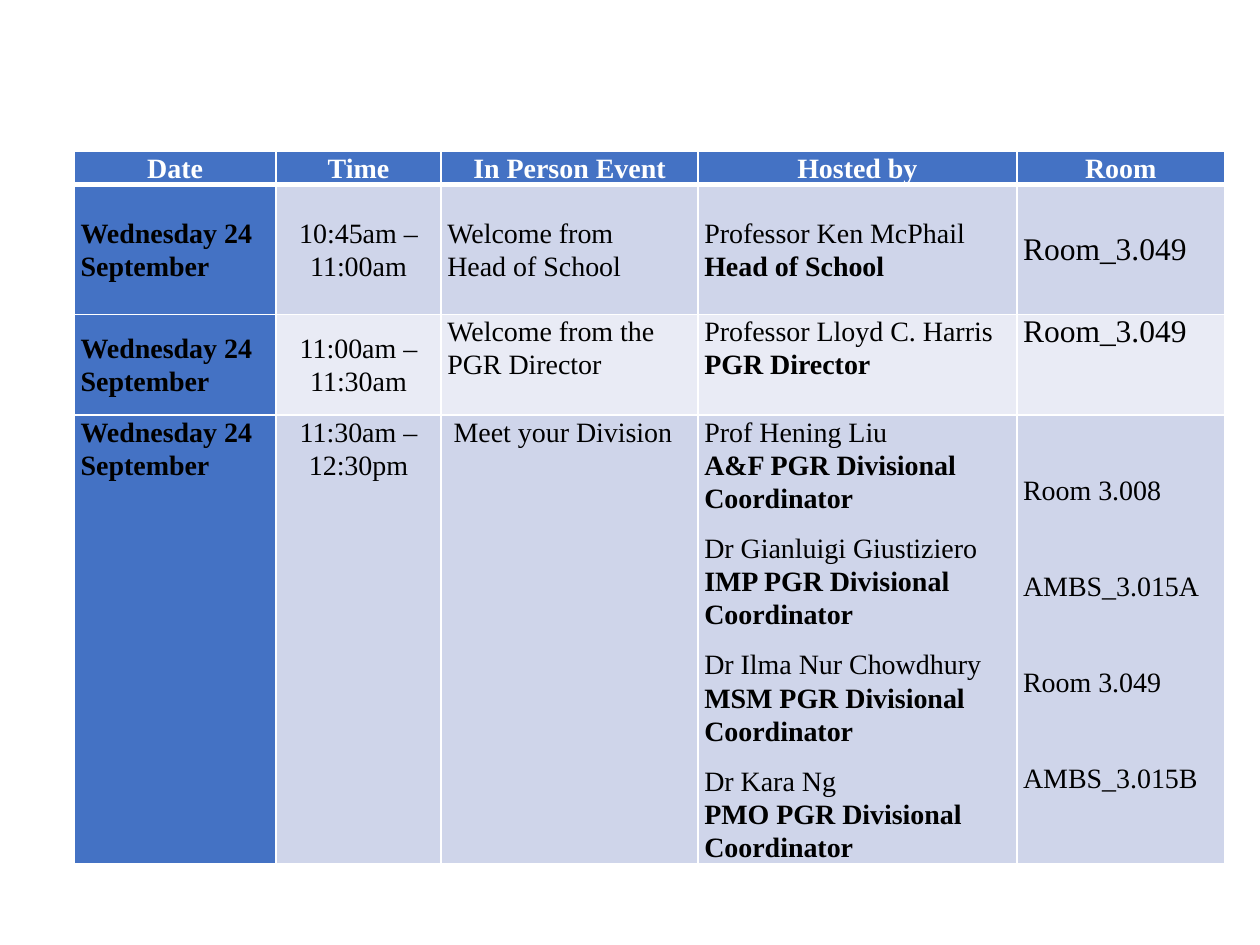
from lxml import etree
from pptx import Presentation, util as u
from pptx.dml.color import RGBColor
from pptx.enum.text import MSO_ANCHOR, PP_ALIGN
from pptx.oxml.ns import qn

FONT = "Times New Roman"
BLUE, PALE, PALER, WHITE, BLACK = "4472C4", "CFD5EA", "E9EBF5", "FFFFFF", "000000"
TOP, MIDDLE = MSO_ANCHOR.TOP, MSO_ANCHOR.MIDDLE
COLS = [1.6, 1.31, 2.04, 2.53, 1.65]
ROWS = [0.26, 1.03, 0.8, 3.55]
DATE = "Wednesday 24 September"
HEADERS = ["Date", "Time", "In Person Event", "Hosted by", "Room"]

# Each session: time, event lines, (host, role) pairs, rooms
SESSIONS = [
    ("10:45am – 11:00am", ["Welcome from", "Head of School"],
     [("Professor Ken McPhail", "Head of School")], ["Room_3.049"]),
    ("11:00am – 11:30am", ["Welcome from the PGR Director"],
     [("Professor Lloyd C. Harris", "PGR Director")], ["Room_3.049"]),
    ("11:30am – 12:30pm", ["Meet your Division"],
     [("Prof Hening Liu", "A&F PGR Divisional Coordinator"),
      ("Dr Gianluigi Giustiziero", "IMP PGR Divisional Coordinator"),
      ("Dr Ilma Nur Chowdhury", "MSM PGR Divisional Coordinator"),
      ("Dr Kara Ng", "PMO PGR Divisional Coordinator")],
     ["Room 3.008", "AMBS_3.015A", "Room 3.049", "AMBS_3.015B"]),
]


def rgb(value):
    return RGBColor.from_string(value)


def set_borders(cell, bottom=1):
    tc_pr = cell._tc.get_or_add_tcPr()
    for side, width in zip("LRTB", (1, 1, 1, bottom)):
        ln = etree.SubElement(tc_pr, qn(f"a:ln{side}"), w=str(u.Pt(width)))
        fill = etree.SubElement(ln, qn("a:solidFill"))
        etree.SubElement(fill, qn("a:srgbClr"), val=WHITE)


def style_cell(cell, fill, anchor, bottom=1):
    set_borders(cell, bottom)
    cell.fill.solid()
    cell.fill.fore_color.rgb = rgb(fill)
    cell.vertical_anchor = anchor
    cell.margin_left = cell.margin_right = u.Inches(0.05)
    cell.margin_top = cell.margin_bottom = 0


def write(cell, lines, bold=False, color=BLACK, size=16, align=PP_ALIGN.LEFT,
          spacing=1.07):
    tf = cell.text_frame
    tf.text = "\n".join(lines)
    for p in tf.paragraphs:
        p.alignment = align
        p.line_spacing = spacing
        for r in p.runs:
            r.font.name = FONT
            r.font.size = u.Pt(size)
            r.font.bold = bold
            r.font.color.rgb = rgb(color)


def write_hosts(cell, hosts):
    write(cell, [line for pair in hosts for line in pair])
    for i, p in enumerate(cell.text_frame.paragraphs):
        p.runs[0].font.bold = i % 2 == 1
        if i and i % 2 == 0:
            p.space_before = u.Pt(9.5)


def write_rooms(cell, rooms):
    single = len(rooms) == 1
    write(cell, rooms, size=18 if single else 16, spacing=1.0)
    if not single:
        cell.margin_top = u.Inches(0.48)
        for p in cell.text_frame.paragraphs[1:]:
            p.space_before = u.Pt(37)


def add_header(table):
    for cell, label in zip(table.rows[0].cells, HEADERS):
        style_cell(cell, BLUE, MIDDLE, bottom=3)
        write(cell, [label], True, WHITE, align=PP_ALIGN.CENTER)


def add_session(row, session, band, anchors):
    time, event, hosts, rooms = session
    cells = list(row.cells)
    for cell, fill, anchor in zip(cells, [BLUE] + [band] * 4, anchors):
        style_cell(cell, fill, anchor)
    write(cells[0], [DATE], bold=True)
    write(cells[1], [time], align=PP_ALIGN.CENTER)
    write(cells[2], event)
    write_hosts(cells[3], hosts)
    write_rooms(cells[4], rooms)


def main():
    prs = Presentation()
    prs.slide_width, prs.slide_height = u.Inches(10), u.Inches(7.5)
    s = prs.slides.add_slide(prs.slide_layouts[6])

    # Timetable grid
    table = s.shapes.add_table(
        len(ROWS), len(COLS), u.Inches(0.59), u.Inches(1.2),
        u.Inches(sum(COLS)), u.Inches(sum(ROWS))).table
    for col, width in zip(table.columns, COLS):
        col.width = u.Inches(width)
    for row, height in zip(table.rows, ROWS):
        row.height = u.Inches(height)

    # Header and sessions
    add_header(table)
    anchors = [[MIDDLE] * 5, [MIDDLE] * 2 + [TOP] * 3, [TOP] * 5]
    for i, session in enumerate(SESSIONS):
        add_session(table.rows[i + 1], session, (PALE, PALER)[i % 2], anchors[i])
    table.cell(3, 2).margin_left = u.Inches(0.1)

    prs.save("out.pptx")


if __name__ == "__main__":
    main()
